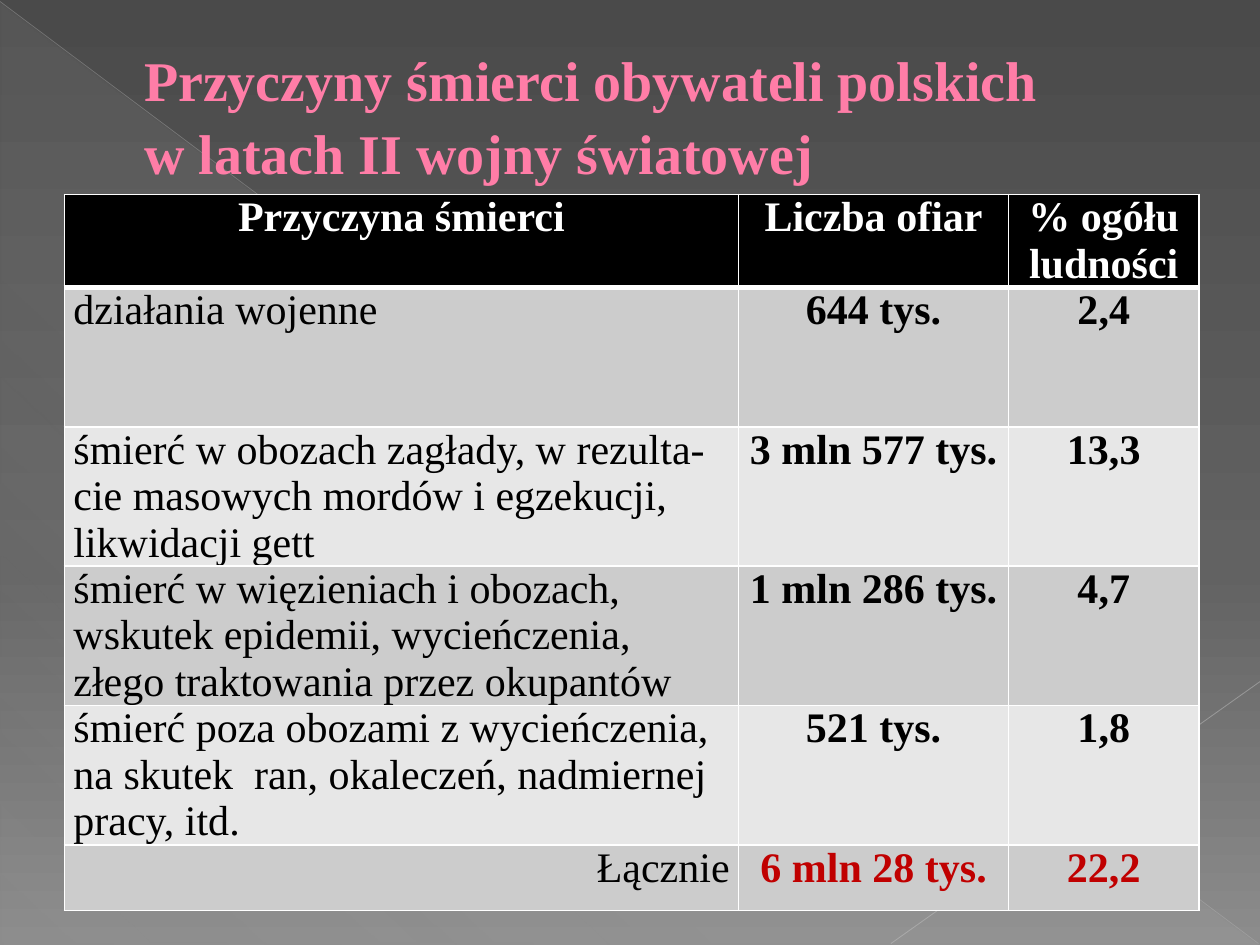
from dataclasses import dataclass

from lxml.etree import SubElement
from pptx import Presentation
from pptx.dml.color import RGBColor
from pptx.enum.shapes import MSO_CONNECTOR, MSO_SHAPE
from pptx.enum.text import MSO_ANCHOR, MSO_AUTO_SIZE, PP_ALIGN
from pptx.oxml.ns import qn
from pptx.util import Cm, Pt


@dataclass(frozen=True)
class Theme:
    font: str = "Times New Roman"
    title_size: int = 32
    table_size: int = 24
    title: str = "FF7DA7"
    white: str = "FFFFFF"
    black: str = "000000"
    total: str = "C00000"
    bands: tuple = ("CCCCCC", "E7E7E7")
    backdrop: tuple = ((0, "4A4A4A", 100), (60, "626262", 100), (100, "8C8C8C", 100))
    sheen: tuple = ((0, "D2D2D2", 10), (70, "D2D2D2", 8), (100, "D2D2D2", 1))
    falling_line: str = "BFBFBF"
    rising_line: str = "C6C6C6"


THEME = Theme()
TITLE = "Przyczyny śmierci obywateli polskich \vw latach II wojny światowej"
HEADER = ("Przyczyna śmierci", "Liczba ofiar", "% ogółu ludności")
CAUSES = (
    ("działania wojenne", "644 tys.", "2,4"),
    ("śmierć w obozach zagłady, w rezulta-cie masowych mordów i egzekucji, "
     "likwidacji gett", "3 mln 577 tys.", "13,3"),
    ("śmierć w więzieniach i obozach, wskutek epidemii, wycieńczenia, "
     "złego traktowania przez okupantów", "1 mln 286 tys.", "4,7"),
    ("śmierć poza obozami z wycieńczenia, na skutek  ran, okaleczeń, "
     "nadmiernej pracy, itd.", "521 tys.", "1,8"),
)
TOTAL = ("Łącznie", "6 mln 28 tys.", "22,2")
COLUMN_WIDTHS = (13.59, 5.44, 3.84)
ROW_HEIGHTS = (1.85, *[2.81] * len(CAUSES), 1.32)


def set_alpha(color, opacity):
    SubElement(color, qn("a:alpha"), val=str(opacity * 1000))


def set_gradient(fill, stops, angle):
    fill.gradient()
    stop_list = fill.gradient_stops[0]._gs.getparent()
    for old_stop in list(stop_list):
        stop_list.remove(old_stop)
    for position, rgb, opacity in stops:
        stop = SubElement(stop_list, qn("a:gs"), pos=str(position * 1000))
        color = SubElement(stop, qn("a:srgbClr"), val=rgb)
        if opacity < 100:
            set_alpha(color, opacity)
    stop_list.getparent().find(qn("a:lin")).set("ang", str(angle * 60000))


def style_font(font, size, rgb, bold):
    font.name = THEME.font
    font.size = Pt(size)
    font.bold = bold
    font.color.rgb = RGBColor.from_string(rgb)


def add_sheen(slide):
    sheen = slide.shapes.add_shape(
        MSO_SHAPE.RIGHT_TRIANGLE, Cm(0.02), Cm(0.05), Cm(25.36), Cm(19))
    sheen.shadow.inherit = False
    sheen.line.fill.background()
    set_gradient(sheen.fill, THEME.sheen, 133)


def add_diagonal(slide, start, end, rgb, width, opacity):
    diagonal = slide.shapes.add_connector(
        MSO_CONNECTOR.STRAIGHT, *map(Cm, start), *map(Cm, end))
    diagonal.line.width = Pt(width)
    diagonal.line.color.rgb = RGBColor.from_string(rgb)
    properties = diagonal._element.spPr
    set_alpha(next(properties.iter(qn("a:srgbClr"))), opacity)
    SubElement(properties, qn("a:effectLst"))


def place_title(slide):
    title = slide.shapes.title
    title.left, title.top, title.width, title.height = map(Cm, (1.3, 0.33, 22.86, 3.89))
    frame = title.text_frame
    frame.text = TITLE
    frame.word_wrap = True
    frame.auto_size = MSO_AUTO_SIZE.NONE
    frame.vertical_anchor = MSO_ANCHOR.MIDDLE
    heading = frame.paragraphs[0]
    heading.alignment = PP_ALIGN.LEFT
    heading.line_spacing = 1.08
    heading._p.get_or_add_pPr().set("marL", str(Cm(1.35)))
    style_font(heading.font, THEME.title_size, THEME.title, True)
    title._element.getparent().append(title._element)


def set_borders(cell, top, bottom):
    properties = cell._tc.get_or_add_tcPr()
    for side, width in (("L", 1), ("R", 1), ("T", top), ("B", bottom)):
        border = SubElement(properties, qn(f"a:ln{side}"), w=str(Pt(width)))
        fill = SubElement(border, qn("a:solidFill"))
        SubElement(fill, qn("a:srgbClr"), val=THEME.white)


def fill_cell(cell, text, background, rgb, bold, alignment):
    cell.text = text
    cell.margin_left = cell.margin_right = Cm(0.18)
    cell.margin_top = cell.margin_bottom = 0
    cell.fill.solid()
    cell.fill.fore_color.rgb = RGBColor.from_string(background)
    paragraph = cell.text_frame.paragraphs[0]
    paragraph.alignment = alignment
    style_font(paragraph.font, THEME.table_size, rgb, bold)


def add_losses_table(slide):
    rows = (HEADER, *CAUSES, TOTAL)
    last = len(rows) - 1
    losses = slide.shapes.add_table(
        len(rows), len(HEADER), Cm(1.3), Cm(3.92),
        Cm(sum(COLUMN_WIDTHS)), Cm(sum(ROW_HEIGHTS))).table
    for column, width in zip(losses.columns, COLUMN_WIDTHS):
        column.width = Cm(width)
    for row, height in zip(losses.rows, ROW_HEIGHTS):
        row.height = Cm(height)
    for r, texts in enumerate(rows):
        background = THEME.bands[(r - 1) % 2] if r else THEME.black
        for c, text in enumerate(texts):
            is_label = r > 0 and c == 0
            rgb, alignment = THEME.black, PP_ALIGN.CENTER
            if r == 0:
                rgb = THEME.white
            elif is_label:
                alignment = PP_ALIGN.RIGHT if r == last else PP_ALIGN.LEFT
            elif r == last:
                rgb = THEME.total
            cell = losses.cell(r, c)
            set_borders(cell, 3 if r == 1 else 1, 3 if r == 0 else 1)
            fill_cell(cell, text, background, rgb, not is_label, alignment)


def main():
    presentation = Presentation()
    presentation.slide_width, presentation.slide_height = Cm(25.4), Cm(19.05)
    slide = presentation.slides.add_slide(presentation.slide_layouts[5])
    set_gradient(slide.background.fill, THEME.backdrop, 90)
    add_sheen(slide)
    add_diagonal(slide, (0, 0.03), (25.37, 19.02), THEME.falling_line, 0.39, 35)
    add_diagonal(slide, (25.4, 13.74), (17.96, 19.02), THEME.rising_line, 0.47, 45)
    place_title(slide)
    add_losses_table(slide)
    presentation.save("out.pptx")


if __name__ == "__main__":
    main()
